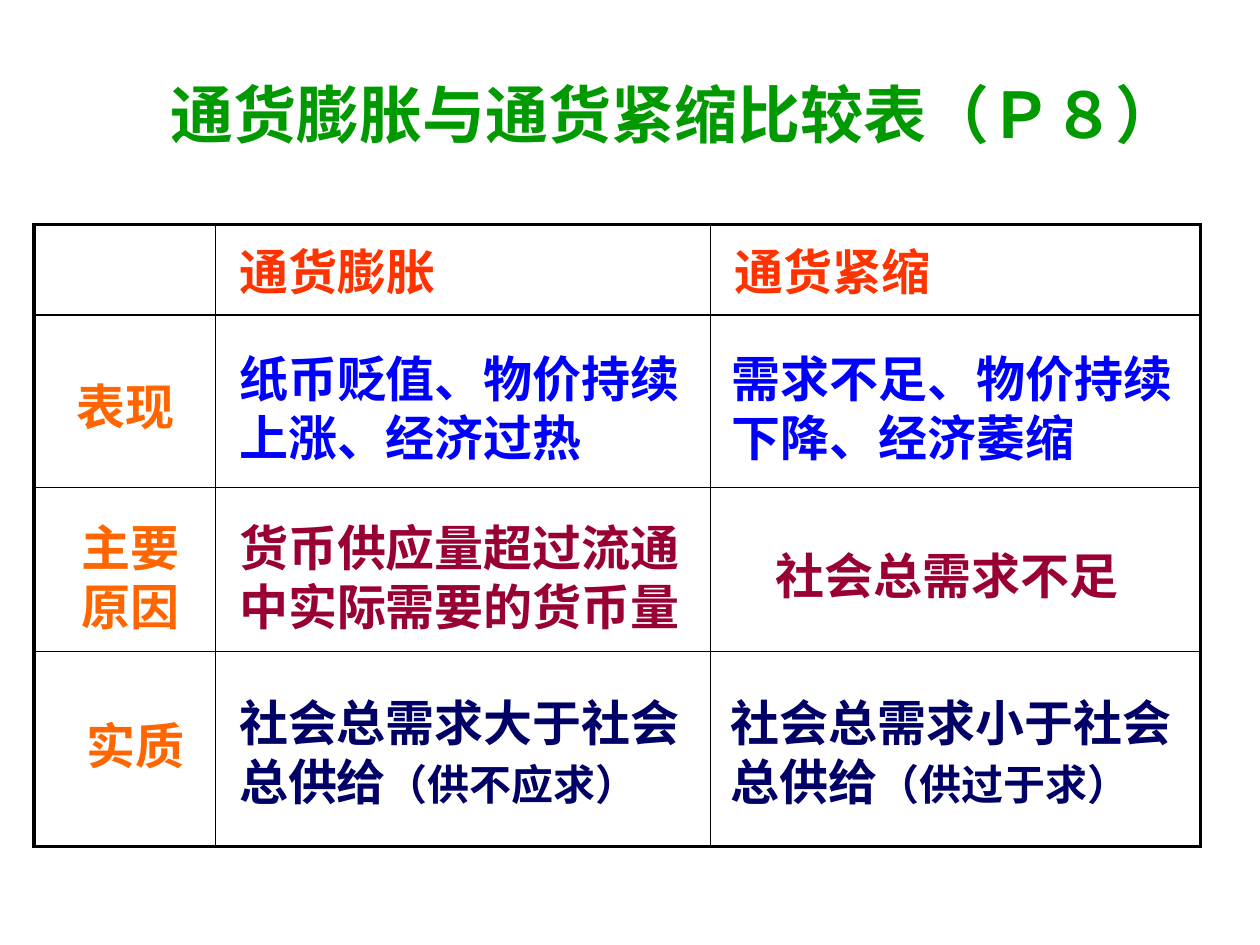
import pptx
import pptx.dml.color
import pptx.enum.text
import pptx.oxml
import pptx.oxml.ns
import pptx.util

Inches = pptx.util.Inches
Pt = pptx.util.Pt
RGBColor = pptx.dml.color.RGBColor
ANCHOR = pptx.enum.text.MSO_ANCHOR

GREEN = RGBColor(0x00, 0x99, 0x00)
RED = RGBColor(0xFF, 0x33, 0x00)
ORANGE = RGBColor(0xFF, 0x66, 0x00)
BLUE = RGBColor(0x00, 0x00, 0xFF)
MAROON = RGBColor(0x99, 0x00, 0x33)
NAVY = RGBColor(0x00, 0x00, 0x66)


def add_span(para, text, size, color, font="Calibri"):
    span = para.add_run()
    span.text = text
    span.font.size = Pt(size)
    span.font.bold = True
    span.font.name = font
    span.font.color.rgb = color


def add_border(cell, side, width):
    """Draw one black cell border; side is L, R, T or B."""
    cell._tc.get_or_add_tcPr().append(pptx.oxml.parse_xml(
        f'<a:ln{side} {pptx.oxml.ns.nsdecls("a")} w="{Pt(width)}">'
        '<a:solidFill><a:srgbClr val="000000"/></a:solidFill>'
        f'</a:ln{side}>'))


deck = pptx.Presentation()
deck.slide_width, deck.slide_height = Inches(10), Inches(7.5)
page = deck.slides.add_slide(deck.slide_layouts.get_by_name("Title Only"))

# Title
title = page.shapes.title
title.left, title.top = Inches(1.25), Inches(0.55)
title.width, title.height = Inches(8.58), Inches(0.7)
title.text_frame.vertical_anchor = ANCHOR.TOP
para = title.text_frame.paragraphs[0]
para.alignment = pptx.enum.text.PP_ALIGN.LEFT
add_span(para, "通货膨胀与通货紧缩比较表（Ｐ８）", 36, GREEN)

# Table grid with a thick outline
col_widths = [1.44, 3.93, 3.89]
row_heights = [0.72, 1.37, 1.3, 1.55]
last_row, last_col = len(row_heights) - 1, len(col_widths) - 1
table = page.shapes.add_table(
    len(row_heights), len(col_widths), Inches(0.27), Inches(1.78),
    Inches(sum(col_widths)), Inches(sum(row_heights))).table
table.first_row = table.horz_banding = False
for column, width in zip(table.columns, col_widths):
    column.width = Inches(width)
for row, height in zip(table.rows, row_heights):
    row.height = Inches(height)

for r in range(last_row + 1):
    for c in range(last_col + 1):
        cell = table.cell(r, c)
        outer_sides = {"L": c == 0, "R": c == last_col,
                       "T": r == 0, "B": r == last_row}
        for side, is_outer in outer_sides.items():
            add_border(cell, side, 2.25 if is_outer else 1)
        cell.fill.background()

for c, heading in enumerate(["通货膨胀", "通货紧缩"], start=1):
    cell = table.cell(0, c)
    cell.vertical_anchor = ANCHOR.MIDDLE
    cell.margin_left = Inches(0.19)
    add_span(cell.text_frame.paragraphs[0], heading, 28, RED, "Noto Sans CJK SC")

# Texts over the grid: left, top, width, height, colour, (text, size) spans
entries = [
    (0.51, 2.94, 1.53, 0.57, ORANGE, [("表现", 28)]),
    (0.55, 4.06, 1.26, 1.03, ORANGE, [("主要原因", 28)]),
    (0.59, 5.63, 1.34, 0.57, ORANGE, [("实质", 28)]),
    (1.8, 2.72, 3.78, 1.03, BLUE, [("纸币贬值、物价持续上涨、经济过热", 28)]),
    (5.71, 2.72, 4.06, 1.03, BLUE, [("需求不足、物价持续下降、经济萎缩", 28)]),
    (1.8, 4.06, 3.78, 1.03, MAROON, [("货币供应量超过流通中实际需要的货币量", 28)]),
    (6.06, 4.28, 3, 0.57, MAROON, [("社会总需求不足", 28)]),
    (1.8, 5.45, 3.83, 1.03, NAVY,
     [("社会总需求大于社会总供给", 28), ("（供不应求）", 24)]),
    (5.7, 5.45, 3.98, 1.03, NAVY,
     [("社会总需求小于社会总供给", 28), ("（供过于求）", 24)]),
]
for left, top, width, height, color, spans in entries:
    box = page.shapes.add_textbox(
        Inches(left), Inches(top), Inches(width), Inches(height))
    box.text_frame.word_wrap = True
    for text, size in spans:
        add_span(box.text_frame.paragraphs[0], text, size, color)

deck.save("out.pptx")
